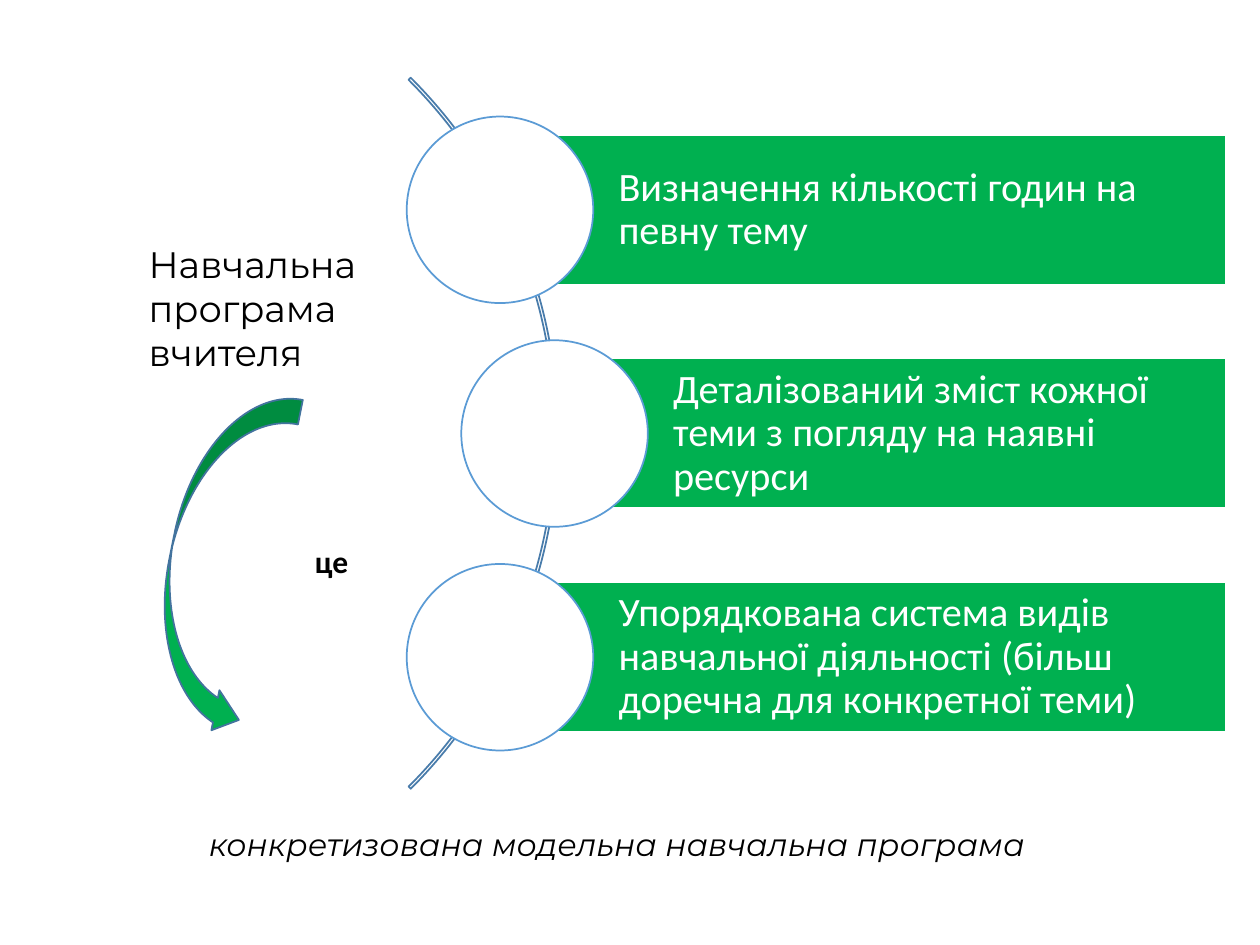
"""Build a slide on what a teacher's own curriculum consists of."""
from pptx import Presentation
from pptx.dml.color import RGBColor
from pptx.enum.shapes import MSO_SHAPE
from pptx.enum.text import MSO_ANCHOR, MSO_AUTO_SIZE, PP_ALIGN
from pptx.util import Cm, Pt

ARC = MSO_SHAPE.BLOCK_ARC
RECT = MSO_SHAPE.RECTANGLE
OVAL = MSO_SHAPE.OVAL
ARROW = MSO_SHAPE.CURVED_RIGHT_ARROW
TOP, MIDDLE = MSO_ANCHOR.TOP, MSO_ANCHOR.MIDDLE
LEFT = PP_ALIGN.LEFT
FIXED = MSO_AUTO_SIZE.NONE

COLORS = {
    "green": "00B050",
    "white": "FFFFFF",
    "black": "000000",
    "arc": "497CAB",
    "ring": "5B9BD5",
    "edge": "43739E",
}


def draw(kind, box, fill, line):
    shape = slide.shapes.add_shape(kind, *[Cm(v) for v in box])
    shape.shadow.inherit = False
    if fill:
        shape.fill.solid()
        shape.fill.fore_color.rgb = RGBColor.from_string(COLORS[fill])
    else:
        shape.fill.background()
    shape.line.color.rgb = RGBColor.from_string(COLORS[line])
    shape.line.width = Pt(1)
    return shape


def write(shape, text, size, face, color="black", anchor=TOP, wrap=True):
    frame = shape.text_frame
    frame.text = text
    frame.auto_size = FIXED
    frame.word_wrap = wrap
    frame.vertical_anchor = anchor
    para = frame.paragraphs[0]
    para.alignment = LEFT
    font = para.runs[0].font
    font.size = Pt(size)
    font.name = face
    font.color.rgb = RGBColor.from_string(COLORS[color])
    return font


prs = Presentation()
prs.slide_width, prs.slide_height = Cm(25.4), Cm(19.05)
slide = prs.slides.add_slide(prs.slide_layouts[5])

title = slide.shapes.title
title.left, title.top = Cm(2.74), Cm(4.75)
title.width, title.height = Cm(5.82), Cm(2.95)
write(title, "Навчальна програма вчителя", 21, "Montserrat")

arc = draw(ARC, (-9.02, -1.4, 20.27, 20.27), None, "arc")
for i, value in enumerate((189, 27, 0.003)):
    arc.adjustments[i] = value

bands = [
    (10.08, "Визначення кількості годин на певну тему"),
    (11.18, "Деталізований зміст кожної теми з погляду на наявні ресурси"),
    (10.08, "Упорядкована система видів навчальної діяльності (більш доречна для конкретної теми)"),
]
right, first, step, high, size = 24.71, 2.72, 4.51, 3.02, 3.76
for i, (left, text) in enumerate(bands):
    top = first + i * step
    band = draw(RECT, (left, top, right - left, high), "green", "white")
    write(band, text, 23, "Calibri", "white", MIDDLE)
    frame = band.text_frame
    frame.margin_left = Cm(2.39)
    frame.margin_right = frame.margin_top = frame.margin_bottom = Cm(0.15)
    frame.paragraphs[0].line_spacing = 0.9
    draw(OVAL, (left - size / 2, top + (high - size) / 2, size, size), "white", "ring")

note = slide.shapes.add_textbox(Cm(3.96), Cm(16.51), Cm(20.73), Cm(1.02))
write(note, "конкретизована модельна навчальна програма", 18, "Montserrat").italic = True

word = slide.shapes.add_textbox(Cm(6.1), Cm(10.8), Cm(1.19), Cm(1.02))
write(word, "це", 18, "Calibri", wrap=False).bold = True

arrow = draw(ARROW, (3.43, 7.8, 2.01, 6.99), "green", "edge")
arrow.rotation = 11.3
for i, value in enumerate((0.25, 0.41, 0.25)):
    arrow.adjustments[i] = value

prs.save("out.pptx")
